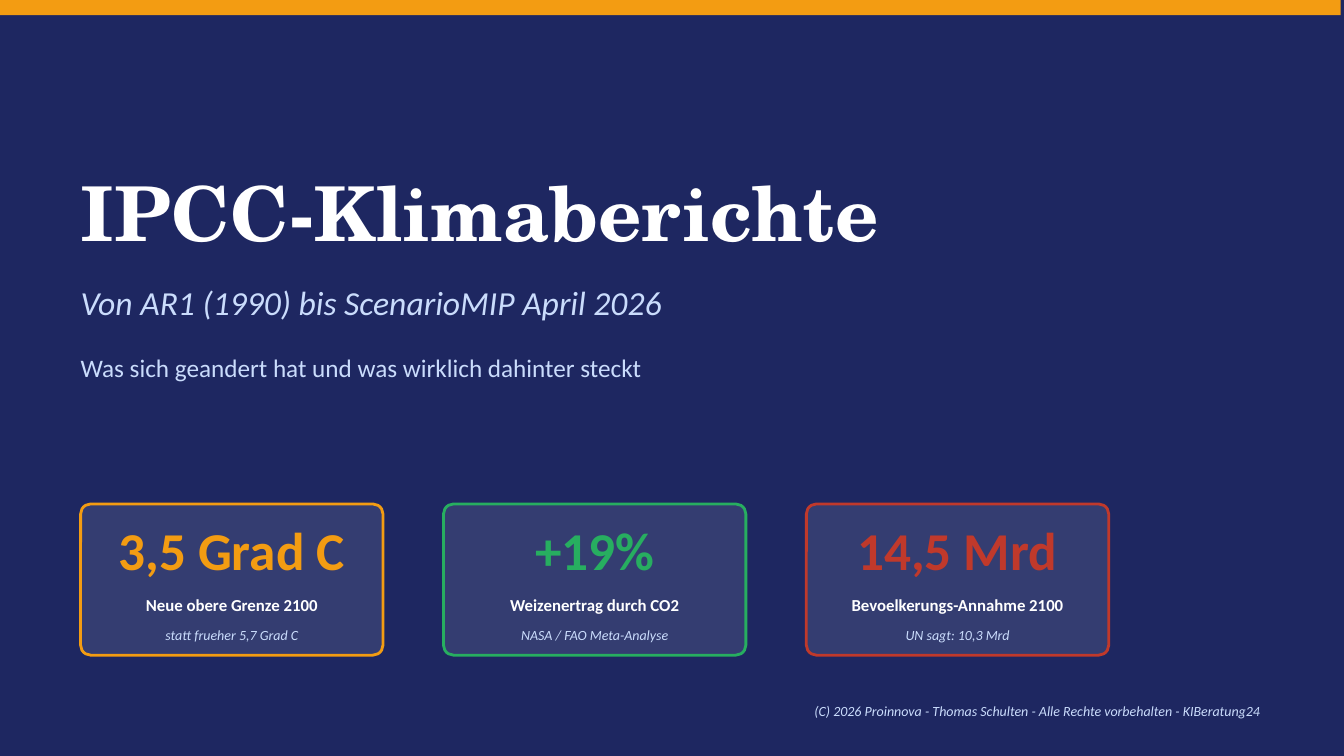
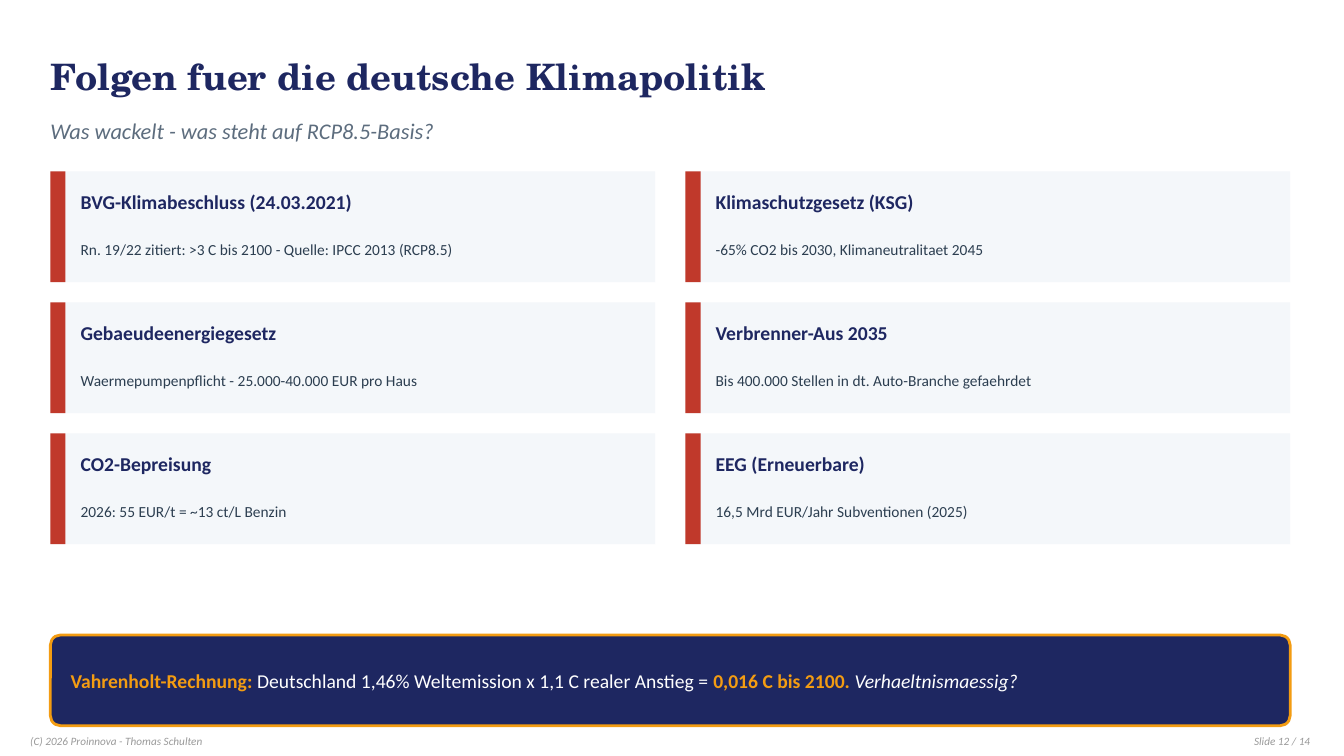
from dataclasses import dataclass

from lxml import etree
from pptx import Presentation
from pptx.dml.color import RGBColor
from pptx.enum.shapes import MSO_SHAPE as Shape
from pptx.enum.text import MSO_ANCHOR as Anchor, MSO_AUTO_SIZE as AutoSize, PP_ALIGN as Align
from pptx.oxml.ns import qn
from pptx.util import Pt


@dataclass(frozen=True)
class Theme:
    navy: str = "1E2761"
    white: str = "FFFFFF"
    ice: str = "CADCFC"
    orange: str = "F39C12"
    green: str = "27AE60"
    red: str = "C0392B"
    panel: str = "F4F7FA"
    slate: str = "5D6D7E"
    ink: str = "2C3E50"
    grey: str = "999999"
    heading_font: str = "TeX Gyre Schola"
    body_font: str = "Calibri"
    cover_title: int = 54
    figure: int = 38
    title: int = 26
    cover_subtitle: int = 24
    lead: int = 18
    subtitle: int = 16
    emphasis: int = 14
    label: int = 12
    body: int = 11
    small: int = 10
    footer: int = 8
    outline: int = 2
    corner: float = 7.2


THEME = Theme()
SLIDE_WIDTH, SLIDE_HEIGHT = 960, 540

COVER = {
    "title": "IPCC-Klimaberichte",
    "subtitle": "Von AR1 (1990) bis ScenarioMIP April 2026",
    "lead": "Was sich geandert hat und was wirklich dahinter steckt",
    "copyright": "(C) 2026 Proinnova - Thomas Schulten - Alle Rechte vorbehalten - KIBeratung24",
}
KEY_FIGURES = [
    ("3,5 Grad C", "Neue obere Grenze 2100", "statt frueher 5,7 Grad C", THEME.orange),
    ("+19%", "Weizenertrag durch CO2", "NASA / FAO Meta-Analyse", THEME.green),
    ("14,5 Mrd", "Bevoelkerungs-Annahme 2100", "UN sagt: 10,3 Mrd", THEME.red),
]

POLICY = {
    "title": "Folgen fuer die deutsche Klimapolitik",
    "subtitle": "Was wackelt - was steht auf RCP8.5-Basis?",
    "copyright": "(C) 2026 Proinnova - Thomas Schulten",
    "page": "Slide 12 / 14",
}
MEASURES = [
    ("BVG-Klimabeschluss (24.03.2021)",
     "Rn. 19/22 zitiert: >3 C bis 2100 - Quelle: IPCC 2013 (RCP8.5)"),
    ("Klimaschutzgesetz (KSG)", "-65% CO2 bis 2030, Klimaneutralitaet 2045"),
    ("Gebaeudeenergiegesetz", "Waermepumpenpflicht - 25.000-40.000 EUR pro Haus"),
    ("Verbrenner-Aus 2035", "Bis 400.000 Stellen in dt. Auto-Branche gefaehrdet"),
    ("CO2-Bepreisung", "2026: 55 EUR/t = ~13 ct/L Benzin"),
    ("EEG (Erneuerbare)", "16,5 Mrd EUR/Jahr Subventionen (2025)"),
]
CALCULATION = [
    ("Vahrenholt-Rechnung: ", {"color": THEME.orange, "bold": True}),
    ("Deutschland 1,46% Weltemission x 1,1 C realer Anstieg = ", {"color": THEME.white}),
    ("0,016 C bis 2100. ", {"color": THEME.orange, "bold": True}),
    ("Verhaeltnismaessig?", {"color": THEME.white, "italic": True}),
]


def place(shape, left, top, width, height):
    shape.left, shape.top = Pt(left), Pt(top)
    shape.width, shape.height = Pt(width), Pt(height)


def prepare_frame(shape, align):
    """Give a text shape no insets and middle anchoring; return its paragraph."""
    frame = shape.text_frame
    frame.word_wrap = True
    frame.auto_size = AutoSize.NONE
    frame.vertical_anchor = Anchor.MIDDLE
    frame.margin_left = frame.margin_top = frame.margin_right = frame.margin_bottom = 0
    paragraph = frame.paragraphs[0]
    paragraph.alignment = align
    return paragraph


def add_run(paragraph, text, size, color, bold=False, italic=False, font_name=THEME.body_font):
    run = paragraph.add_run()
    run.text = text
    font = run.font
    font.name, font.size = font_name, Pt(size)
    font.bold, font.italic = bold, italic
    font.color.rgb = RGBColor.from_string(color)


def add_text(slide, box, text, size, color, align=Align.LEFT, **style):
    paragraph = prepare_frame(slide.shapes.add_textbox(*map(Pt, box)), align)
    add_run(paragraph, text, size, color, **style)


def add_box(slide, box, fill, outline=None, opacity=None):
    """Add a rectangle; an outlined one gets rounded corners."""
    kind = Shape.ROUNDED_RECTANGLE if outline else Shape.RECTANGLE
    shape = slide.shapes.add_shape(kind, *map(Pt, box))
    shape.shadow.inherit = False
    shape.fill.solid()
    shape.fill.fore_color.rgb = RGBColor.from_string(fill)
    if opacity is not None:
        color = shape.fill._xPr.find(qn("a:solidFill")).find(qn("a:srgbClr"))
        etree.SubElement(color, qn("a:alpha")).set("val", str(opacity * 1000))
    if outline:
        shape.adjustments[0] = THEME.corner / min(box[2:])
        shape.line.color.rgb = RGBColor.from_string(outline)
        shape.line.width = Pt(THEME.outline)
    else:
        shape.line.fill.background()


def new_slide(presentation, background, title, title_box, title_size, title_color):
    slide = presentation.slides.add_slide(presentation.slide_layouts[5])
    slide.background.fill.solid()
    slide.background.fill.fore_color.rgb = RGBColor.from_string(background)
    place(slide.shapes.title, *title_box)
    paragraph = prepare_frame(slide.shapes.title, Align.LEFT)
    add_run(paragraph, title, title_size, title_color, bold=True, font_name=THEME.heading_font)
    return slide


def add_key_figure(slide, left, figure, label, note, accent):
    top, width = 360, 216
    add_box(slide, (left, top, width, 108), THEME.white, accent, opacity=10)
    rows = [
        (7.2, 50.4, figure, THEME.figure, accent, {"bold": True}),
        (61.2, 21.6, label, THEME.label, THEME.white, {"bold": True}),
        (82.8, 21.6, note, THEME.small, THEME.ice, {"italic": True}),
    ]
    for offset, height, text, size, color, style in rows:
        add_text(slide, (left, top + offset, width, height), text, size, color,
                 Align.CENTER, **style)


def build_cover(presentation):
    left, width = 57.6, 842.4
    slide = new_slide(presentation, THEME.navy, COVER["title"], (left, 108, width, 86.4),
                      THEME.cover_title, THEME.white)
    add_box(slide, (0, 0, 957.6, 10.8), THEME.orange)
    add_text(slide, (left, 194.4, width, 43.2), COVER["subtitle"],
             THEME.cover_subtitle, THEME.ice, italic=True)
    add_text(slide, (left, 244.8, width, 36), COVER["lead"], THEME.lead, THEME.ice)
    for index, key_figure in enumerate(KEY_FIGURES):
        add_key_figure(slide, left + index * 259.2, *key_figure)
    add_text(slide, (left, 493.2, width, 28.8), COVER["copyright"],
             THEME.small, THEME.ice, Align.RIGHT, italic=True)


def add_measure(slide, left, top, heading, detail):
    width, height = 432, 79.2
    text_left, text_width = left + 21.6, 403.2
    add_box(slide, (left, top, width, height), THEME.panel)
    add_box(slide, (left, top, 10.8, height), THEME.red)
    add_text(slide, (text_left, top + 7.2, text_width, 28.8), heading,
             THEME.emphasis, THEME.navy, bold=True)
    add_text(slide, (text_left, top + 36, text_width, 39.6), detail, THEME.body, THEME.ink)


def build_policy(presentation):
    left, width = 36, 885.6
    slide = new_slide(presentation, THEME.white, POLICY["title"], (left, 28.8, width, 50.4),
                      THEME.title, THEME.navy)
    add_text(slide, (left, 79.2, width, 28.8), POLICY["subtitle"],
             THEME.subtitle, THEME.slate, italic=True)
    for index, (heading, detail) in enumerate(MEASURES):
        row, column = divmod(index, 2)
        add_measure(slide, left + column * 453.6, 122.4 + row * 93.6, heading, detail)

    add_box(slide, (left, 453.6, width, 64.8), THEME.navy, THEME.orange)
    banner_text = slide.shapes.add_textbox(Pt(50.4), Pt(457.2), Pt(856.8), Pt(57.6))
    paragraph = prepare_frame(banner_text, Align.LEFT)
    for text, style in CALCULATION:
        add_run(paragraph, text, THEME.emphasis, **style)

    footers = [
        (21.6, 504, POLICY["copyright"], Align.LEFT),
        (756, 180, POLICY["page"], Align.RIGHT),
    ]
    for footer_left, footer_width, text, align in footers:
        add_text(slide, (footer_left, 522, footer_width, 14.4), text,
                 THEME.footer, THEME.grey, align, italic=True)


def main():
    presentation = Presentation()
    presentation.slide_width, presentation.slide_height = Pt(SLIDE_WIDTH), Pt(SLIDE_HEIGHT)
    build_cover(presentation)
    build_policy(presentation)
    presentation.save("out.pptx")


if __name__ == "__main__":
    main()
